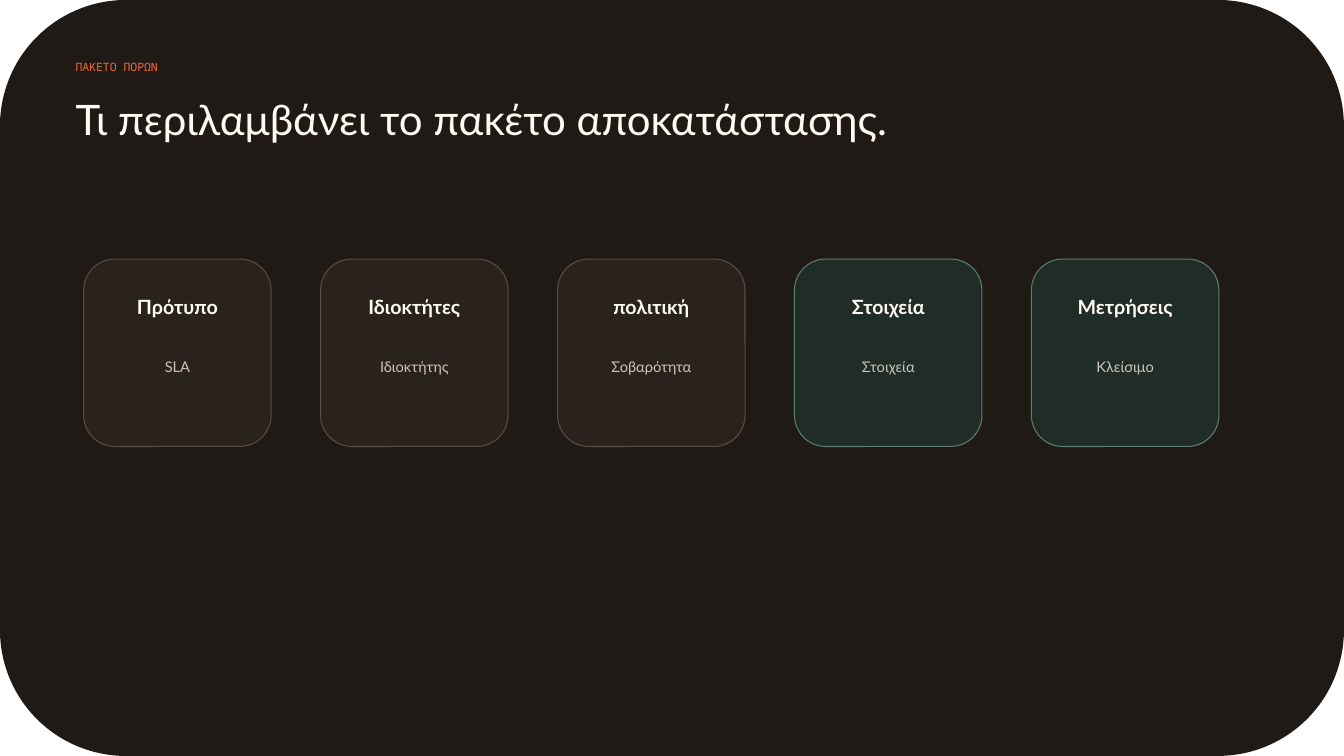
from dataclasses import dataclass

from pptx import Presentation
from pptx.dml.color import RGBColor as RGB
from pptx.enum.shapes import MSO_SHAPE as SHAPE
from pptx.enum.text import MSO_ANCHOR as ANCHOR, MSO_AUTO_SIZE as AUTO, PP_ALIGN as ALIGN
from pptx.util import Inches, Pt


@dataclass(frozen=True)
class Theme:
    sans: str = "Lato"
    mono: str = "Noto Sans Mono"
    backdrop: str = "201A16"
    accent: str = "F26B3A"
    ink: str = "FFF9EF"
    muted: str = "CFC4B8"
    brown: tuple = ("2A221D", "5B4D44")
    green: tuple = ("1F2C27", "5C7E6B")
    kicker_size: float = 8.2
    title_size: float = 30
    heading_size: float = 14
    body_size: float = 10.5
    border: float = 0.75


class Deck:
    """Draws styled elements on the current slide."""

    def __init__(self, prs, theme):
        self.theme = theme
        self.s = prs.slides.add_slide(prs.slide_layouts[5])

    def panel(self, x, y, w, h, fill, line=None):
        sp = self.s.shapes.add_shape(SHAPE.ROUNDED_RECTANGLE, Inches(x), Inches(y), Inches(w), Inches(h))
        sp.shadow.inherit = False
        sp.fill.solid()
        sp.fill.fore_color.rgb = RGB.from_string(fill)
        if line:
            sp.line.color.rgb = RGB.from_string(line)
            sp.line.width = Pt(self.theme.border)
        else:
            sp.line.fill.background()
        return sp

    def set_text(self, sp, text, size, color, font, bold=False, align=ALIGN.LEFT):
        tf = sp.text_frame
        tf.word_wrap = True
        tf.auto_size = AUTO.NONE
        tf.vertical_anchor = ANCHOR.TOP
        tf.margin_left = tf.margin_right = tf.margin_top = tf.margin_bottom = 0
        tf.text = text
        p = tf.paragraphs[0]
        p.alignment = align
        p.font.name = font
        p.font.size = Pt(size)
        p.font.bold = bold
        p.font.color.rgb = RGB.from_string(color)

    def text(self, x, y, w, h, *args, **style):
        sp = self.s.shapes.add_textbox(Inches(x), Inches(y), Inches(w), Inches(h))
        self.set_text(sp, *args, **style)

    def title(self, x, y, w, h, text):
        sp = self.s.shapes.title
        sp.left, sp.top, sp.width, sp.height = Inches(x), Inches(y), Inches(w), Inches(h)
        self.set_text(sp, text, self.theme.title_size, self.theme.ink, self.theme.sans)

    def backdrop(self, w, h):
        sp = self.panel(0, 0, w, h, self.theme.backdrop)
        self.s.shapes.title.element.addprevious(sp.element)

    def card(self, x, y, side, heading, body, colors):
        t = self.theme
        self.panel(x, y, side, side, *colors)
        for text, dy, w, h, size, color, bold in (
            (heading, 0.36, 1.49, 0.33, t.heading_size, t.ink, True),
            (body, 0.98, 1.55, 0.57, t.body_size, t.muted, False),
        ):
            self.text(x + (side - w) / 2, y + dy, w, h, text, size, color, t.sans,
                      bold=bold, align=ALIGN.CENTER)


def main():
    width, height = 13.33, 7.5
    prs = Presentation()
    prs.slide_width, prs.slide_height = Inches(width), Inches(height)
    theme = Theme()
    deck = Deck(prs, theme)

    deck.backdrop(width, height)
    deck.text(0.75, 0.6, 4.59, 0.28, "ΠΑΚΕΤΟ ΠΟΡΩΝ", theme.kicker_size, theme.accent, theme.mono)
    deck.title(0.75, 0.93, 8.31, 0.71, "Τι περιλαμβάνει το πακέτο αποκατάστασης.")

    cards = [
        ("Πρότυπο", "SLA", theme.brown),
        ("Ιδιοκτήτες", "Ιδιοκτήτης", theme.brown),
        ("πολιτική", "Σοβαρότητα", theme.brown),
        ("Στοιχεία", "Στοιχεία", theme.green),
        ("Μετρήσεις", "Κλείσιμο", theme.green),
    ]
    left, top, side, pitch = 0.83, 2.57, 1.86, 2.35
    for i, card in enumerate(cards):
        deck.card(left + i * pitch, top, side, *card)

    prs.save("out.pptx")


if __name__ == "__main__":
    main()
